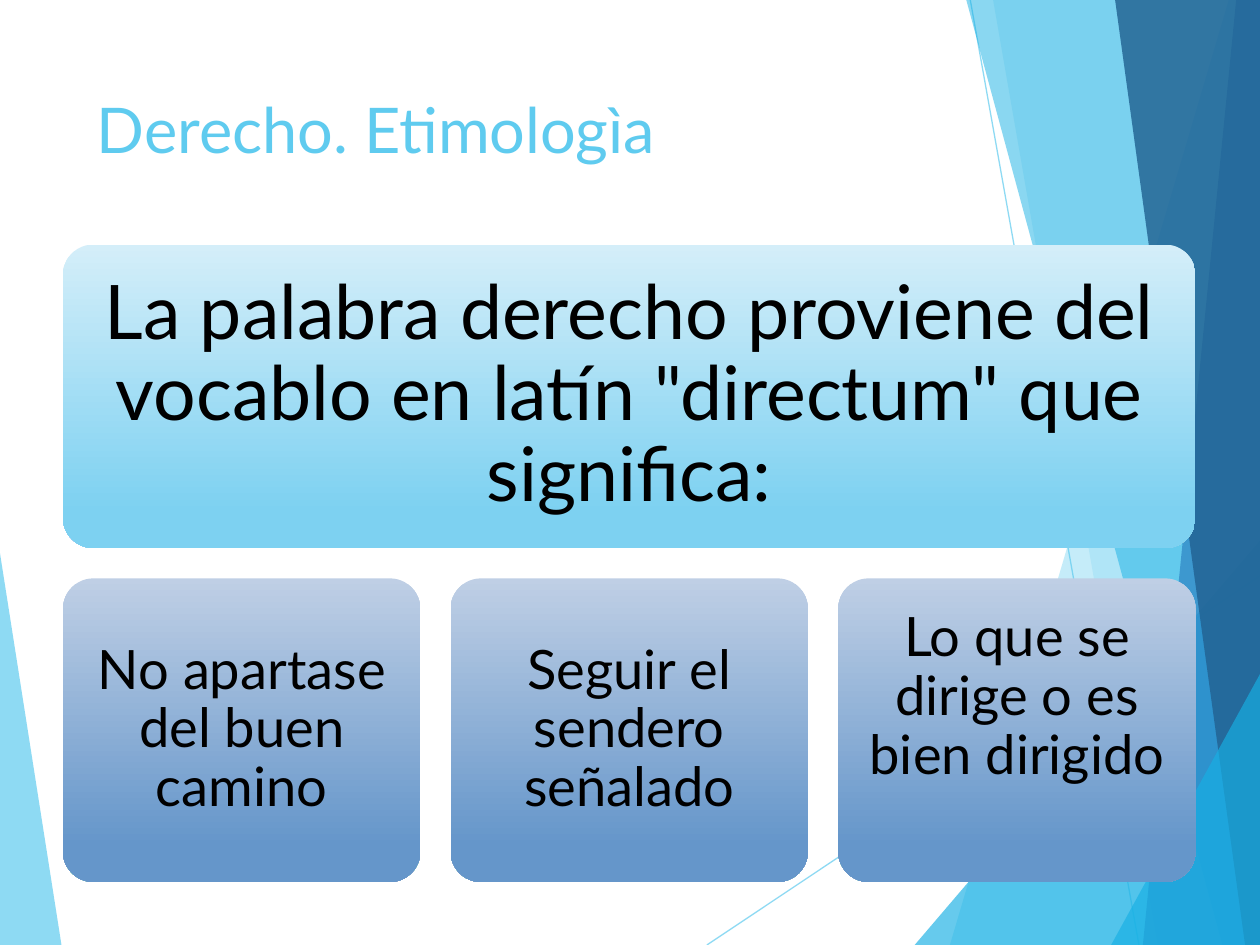
from dataclasses import dataclass

from lxml import etree
from pptx import Presentation
from pptx.dml.color import RGBColor
from pptx.enum.shapes import MSO_CONNECTOR, MSO_SHAPE
from pptx.enum.text import MSO_ANCHOR, MSO_AUTO_SIZE, PP_ALIGN
from pptx.oxml.ns import qn
from pptx.util import Cm, Pt

STRAIGHT = MSO_CONNECTOR.STRAIGHT
ROUNDED = MSO_SHAPE.ROUNDED_RECTANGLE
TOP, MIDDLE = MSO_ANCHOR.TOP, MSO_ANCHOR.MIDDLE
NO_AUTOSIZE = MSO_AUTO_SIZE.NONE
LEFT, CENTER = PP_ALIGN.LEFT, PP_ALIGN.CENTER

WIDTH, HEIGHT = 25.4, 19.05


@dataclass(frozen=True)
class Theme:
    font: str = "Lato"
    text: str = "000000"
    sky: str = "5FCBEF"
    cyan: str = "17B0E4"
    blue: str = "2E83C3"
    navy: str = "226292"
    statement_gradient: tuple = ("D4EEF9", "7DD1F1")
    meaning_gradient: tuple = ("BFCFE5", "6596CA")
    title_size: int = 36
    statement_size: int = 43
    meaning_size: int = 31


def write_text(frame, text, *, font, size, color, align=LEFT, anchor=TOP,
               spacing=1.0, inset=(0.25, 0.13, 0.25, 0.13)):
    frame.word_wrap = True
    frame.auto_size = NO_AUTOSIZE
    frame.vertical_anchor = anchor
    frame.margin_left, frame.margin_top, frame.margin_right, frame.margin_bottom = map(Cm, inset)
    paragraph = frame.paragraphs[0]
    paragraph.alignment = align
    paragraph.line_spacing = spacing
    run = paragraph.add_run()
    run.text = text
    run.font.name = font
    run.font.size = Pt(size)
    run.font.color.rgb = RGBColor.from_string(color)


def set_solid(fill, color, opacity):
    fill.solid()
    fill.fore_color.rgb = RGBColor.from_string(color)
    color_element = fill._xPr.find(qn("a:solidFill"))[0]
    etree.SubElement(color_element, qn("a:alpha")).set("val", str(opacity * 1000))


class SlideBuilder:
    def __init__(self, slide, theme):
        self.slide = slide
        self.theme = theme

    def polygon(self, points, color, opacity):
        start, *others = [(Cm(x), Cm(y)) for x, y in points]
        builder = self.slide.shapes.build_freeform(*start)
        builder.add_line_segments(others, close=True)
        shape = builder.convert_to_shape()
        shape.shadow.inherit = False
        shape.line.fill.background()
        set_solid(shape.fill, color, opacity)

    def band(self, top_x, bottom_x, color, opacity):
        points = [(top_x, 0), (bottom_x, HEIGHT), (WIDTH, HEIGHT), (WIDTH, 0)]
        self.polygon(points, color, opacity)

    def corner(self, bottom_x, side_y, color, opacity):
        points = [(bottom_x, HEIGHT), (WIDTH, side_y), (WIDTH, HEIGHT)]
        self.polygon(points, color, opacity)

    def line(self, start, end):
        connector = self.slide.shapes.add_connector(STRAIGHT, *map(Cm, (*start, *end)))
        connector.line.width = Pt(0.75)
        set_solid(connector.line.fill, self.theme.sky, 70)
        etree.SubElement(connector._element.spPr, qn("a:effectLst"))

    def title(self, text, left, top, width, height):
        title = self.slide.shapes.title
        title.left, title.top, title.width, title.height = map(Cm, (left, top, width, height))
        write_text(title.text_frame, text, font=self.theme.font,
                   size=self.theme.title_size, color=self.theme.sky)
        self.slide.shapes._spTree.append(title._element)

    def card(self, text, left, top, width, height, *, gradient, size, inset):
        shape = self.slide.shapes.add_shape(ROUNDED, *map(Cm, (left, top, width, height)))
        shape.adjustments[0] = 0.1
        shape.shadow.inherit = False
        shape.line.fill.background()
        shape.fill.gradient()
        shape.fill.gradient_angle = 270
        for stop, color, position in zip(shape.fill.gradient_stops, gradient, (0, 0.88)):
            stop.color.rgb = RGBColor.from_string(color)
            stop.position = position
        write_text(shape.text_frame, text, font=self.theme.font, size=size,
                   color=self.theme.text, align=CENTER, anchor=MIDDLE,
                   spacing=0.9, inset=inset)


def draw_backdrop(builder):
    theme = builder.theme
    builder.polygon([(0, 11.15), (1.24, HEIGHT), (0, HEIGHT)], theme.sky, 70)
    builder.line((14.25, HEIGHT), (WIDTH, 11.61))
    builder.line((19.56, 0), (22.96, HEIGHT))
    builder.band(24.77, 19.15, theme.sky, 36)
    builder.band(20.02, 23.34, theme.sky, 20)
    builder.corner(18.44, 10.9, theme.cyan, 66)
    builder.band(19.48, 24.64, theme.cyan, 50)
    builder.band(24.92, 23.04, theme.blue, 70)
    builder.band(22.48, 25.1, theme.navy, 82)
    builder.corner(22.4, 13.59, theme.cyan, 66)


def draw_cards(builder):
    theme = builder.theme
    left, top, width, height, gap = 1.27, 4.93, 22.83, 6.12, 0.61
    builder.card('La palabra derecho proviene del vocablo en latín "directum" que significa:',
                 left, top, width, height, gradient=theme.statement_gradient,
                 size=theme.statement_size, inset=(0.46,) * 4)
    meanings = [
        ("No apartase del buen camino", 0.33),
        ("Seguir el sendero señalado", 0.33),
        ("Lo que se dirige o es bien dirigido", 1.63),
    ]
    card_width = (width - gap * (len(meanings) - 1)) / len(meanings)
    for index, (text, bottom_inset) in enumerate(meanings):
        builder.card(text, left + index * (card_width + gap), top + height + gap,
                     card_width, height, gradient=theme.meaning_gradient,
                     size=theme.meaning_size, inset=(0.33, 0.33, 0.33, bottom_inset))


def main():
    presentation = Presentation()
    presentation.slide_width, presentation.slide_height = Cm(WIDTH), Cm(HEIGHT)
    slide = presentation.slides.add_slide(presentation.slide_layouts[5])
    builder = SlideBuilder(slide, Theme())
    draw_backdrop(builder)
    builder.title("Derecho. Etimologìa", 1.7, 1.7, 17.63, 3.66)
    draw_cards(builder)
    presentation.save("out.pptx")


if __name__ == "__main__":
    main()
